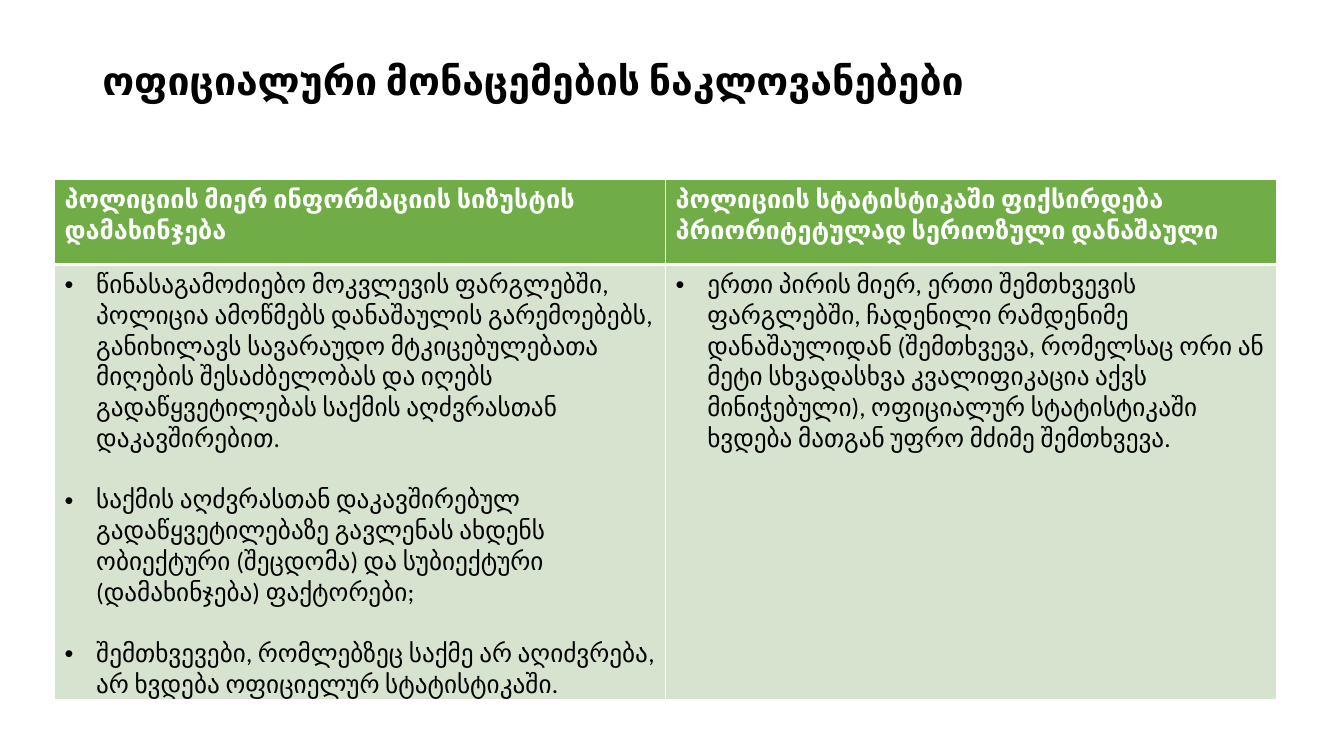
from dataclasses import dataclass

from lxml.etree import SubElement
from pptx import Presentation
from pptx.dml.color import RGBColor
from pptx.enum.text import MSO_ANCHOR as Anchor
from pptx.oxml.ns import qn
from pptx.util import Emu, Pt

EMU_PER_PX = 9525
FONT = "Calibri"
COLOURS = {"black": "000000", "white": "FFFFFF", "green": "70AD47", "pale": "D5E3CF"}
BULLET_INDENT = 30
BULLET_GAP = 22  # points between bulleted paragraphs


@dataclass
class Column:
    heading: str
    points: list[str]


@dataclass
class RowStyle:
    height: int
    fill: str
    ink: str
    bold: bool
    bulleted: bool
    borders: dict[str, int]  # side -> points, in schema order


TITLE = "ოფიციალური მონაცემების ნაკლოვანებები"
COLUMNS = [
    Column("პოლიციის მიერ ინფორმაციის სიზუსტის დამახინჯება", [
        "წინასაგამოძიებო მოკვლევის ფარგლებში, პოლიცია ამოწმებს დანაშაულის "
        "გარემოებებს, განიხილავს სავარაუდო მტკიცებულებათა მიღების შესაძბელობას "
        "და იღებს გადაწყვეტილებას საქმის აღძვრასთან დაკავშირებით.",
        "საქმის აღძვრასთან დაკავშირებულ გადაწყვეტილებაზე გავლენას ახდენს "
        "ობიექტური (შეცდომა) და სუბიექტური (დამახინჯება) ფაქტორები;",
        "შემთხვევები, რომლებზეც საქმე არ აღიძვრება, არ ხვდება ოფიციელურ "
        "სტატისტიკაში.",
    ]),
    Column("პოლიციის სტატისტიკაში ფიქსირდება პრიორიტეტულად სერიოზული დანაშაული", [
        "ერთი პირის მიერ, ერთი შემთხვევის ფარგლებში, ჩადენილი რამდენიმე "
        "დანაშაულიდან (შემთხვევა, რომელსაც ორი ან მეტი სხვადასხვა კვალიფიკაცია "
        "აქვს მინიჭებული), ოფიციალურ სტატისტიკაში ხვდება მათგან უფრო მძიმე "
        "შემთხვევა.",
    ]),
]
HEADER = RowStyle(81, "green", "white", True, False, {"L": 1, "R": 1, "T": 1, "B": 3})
BODY = RowStyle(413, "pale", "black", False, True, {"L": 1, "R": 1, "T": 3, "B": 1})


def px(length: int) -> Emu:
    return Emu(length * EMU_PER_PX)


def colour(name: str) -> RGBColor:
    return RGBColor.from_string(COLOURS[name])


def add_run(para, text: str, size: int, ink: str, bold: bool) -> None:
    span = para.add_run()
    span.text = text
    span.font.name = FONT
    span.font.size = Pt(size)
    span.font.bold = bold
    span.font.color.rgb = colour(ink)


def add_bullet(para) -> None:
    props = para._p.get_or_add_pPr()
    props.set("marL", str(px(BULLET_INDENT)))
    props.set("indent", str(px(-BULLET_INDENT)))
    SubElement(props, qn("a:buFont"), typeface="Arial")
    SubElement(props, qn("a:buChar"), char="•")


def add_borders(cell, borders: dict[str, int]) -> None:
    props = cell._tc.get_or_add_tcPr()
    for side, points in borders.items():
        line = SubElement(props, qn(f"a:ln{side}"), w=str(Pt(points)))
        fill = SubElement(line, qn("a:solidFill"))
        SubElement(fill, qn("a:srgbClr"), val=COLOURS["white"])


def fill_cell(cell, texts: list[str], style: RowStyle) -> None:
    add_borders(cell, style.borders)
    cell.fill.solid()
    cell.fill.fore_color.rgb = colour(style.fill)
    frame = cell.text_frame
    for index, text in enumerate(texts):
        para = frame.add_paragraph() if index else frame.paragraphs[0]
        if index:
            para.space_before = Pt(BULLET_GAP)
        if style.bulleted:
            add_bullet(para)
        add_run(para, text, 18, style.ink, style.bold)


def add_title(page) -> None:
    box = page.shapes.add_textbox(px(88), px(38), px(1104), px(81))
    frame = box.text_frame
    frame.word_wrap = True
    frame.vertical_anchor = Anchor.MIDDLE
    para = frame.paragraphs[0]
    para.line_spacing = 0.9
    add_run(para, TITLE, 28, "black", True)


def add_comparison(page) -> None:
    styles = [HEADER, BODY]
    height = sum(style.height for style in styles)
    table = page.shapes.add_table(
        len(styles), len(COLUMNS), px(52), px(171), px(1164), px(height)
    ).table
    for row, style in zip(table.rows, styles):
        row.height = px(style.height)
    for index, column in enumerate(COLUMNS):
        fill_cell(table.cell(0, index), [column.heading], HEADER)
        fill_cell(table.cell(1, index), column.points, BODY)


def main() -> None:
    deck = Presentation()
    deck.slide_width, deck.slide_height = px(1280), px(720)
    page = deck.slides.add_slide(deck.slide_layouts[6])
    # Heading
    add_title(page)
    # Two-column comparison
    add_comparison(page)
    deck.save("out.pptx")


if __name__ == "__main__":
    main()
